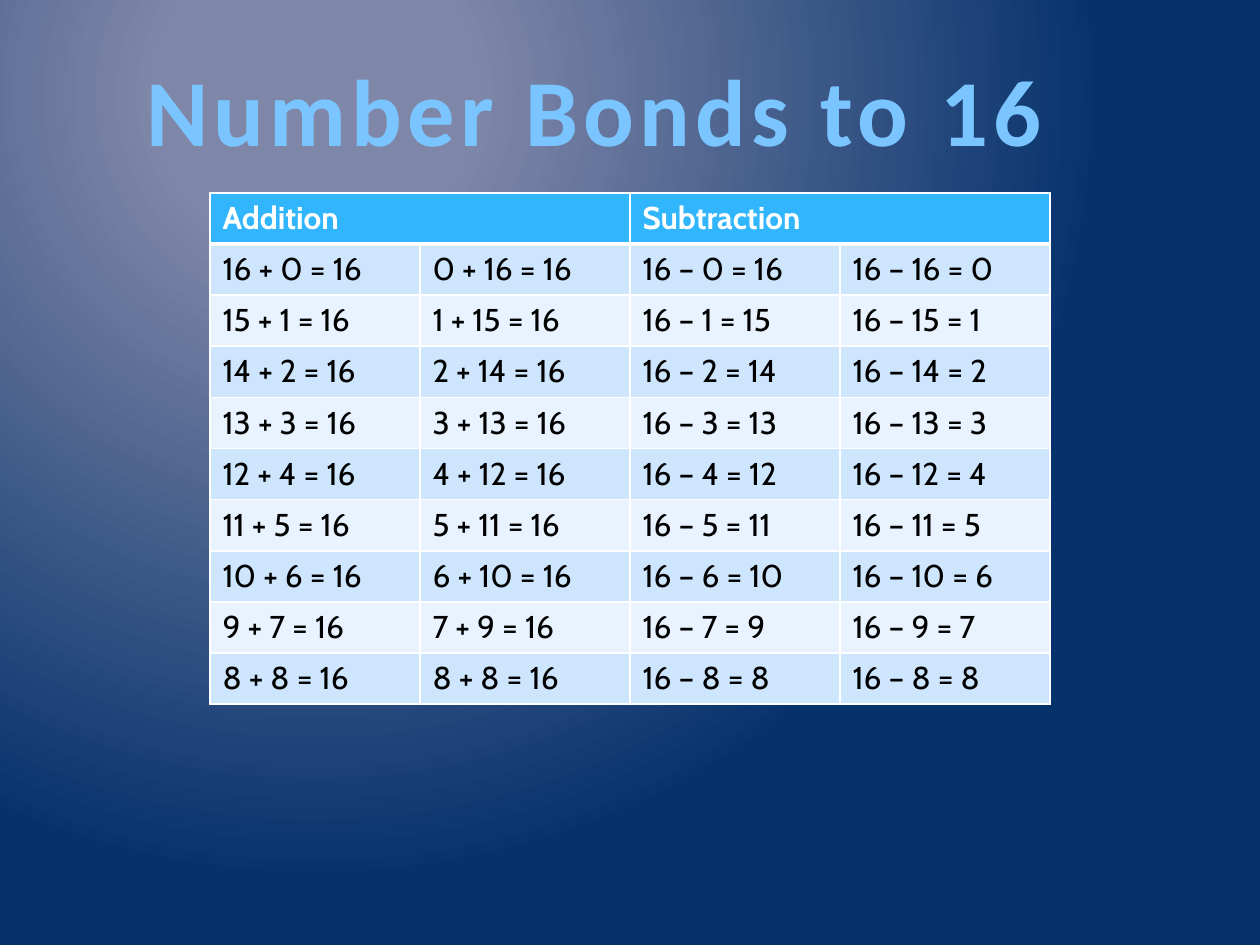
from lxml import etree
from pptx import Presentation
from pptx.dml.color import RGBColor
from pptx.enum.text import MSO_ANCHOR, PP_ALIGN
from pptx.oxml import parse_xml
from pptx.oxml.ns import nsdecls, qn
from pptx.util import Inches, Pt

CENTER = PP_ALIGN.CENTER
MIDDLE = MSO_ANCHOR.MIDDLE

HAZE = RGBColor(0x7F, 0x87, 0xA8)
NAVY = RGBColor(0x06, 0x32, 0x6C)
SKY = RGBColor(0x7A, 0xC5, 0xFF)
AZURE = RGBColor(0x00, 0x92, 0xDF)
OUTLINE = RGBColor(0x07, 0x3E, 0x87)
HEADER_BLUE = RGBColor(0x31, 0xB6, 0xFD)
BANDS = (RGBColor(0xCE, 0xE5, 0xFE), RGBColor(0xE8, 0xF3, 0xFF))
WHITE = RGBColor(0xFF, 0xFF, 0xFF)
BLACK = RGBColor(0x00, 0x00, 0x00)

WIDTH, HEIGHT = Inches(10), Inches(7.5)
TOTAL = 16
BOND_COUNT = TOTAL // 2 + 1
COLUMNS = 4


def gradient(stops, direction):
    """Return a gradient fill from (percent, colour) stops and direction XML."""
    marks = "".join(
        f'<a:gs pos="{percent * 1000}"><a:srgbClr val="{color}"/></a:gs>'
        for percent, color in stops
    )
    return parse_xml(
        f'<a:gradFill rotWithShape="1" {nsdecls("a")}>'
        f"<a:gsLst>{marks}</a:gsLst>{direction}</a:gradFill>"
    )


def paint_background(slide):
    """Fill the slide with a circular glow near its top left."""
    slide.background.fill.solid()
    solid = slide.element.find(".//" + qn("p:bgPr")).find(qn("a:solidFill"))
    glow = gradient(
        ((20, HAZE), (100, NAVY)),
        '<a:path path="circle">'
        '<a:fillToRect l="50000" t="20000" r="100000" b="100000"/></a:path>',
    )
    solid.getparent().replace(solid, glow)


def add_title(slide, text):
    """Add the spaced, outlined gradient heading."""
    box = slide.shapes.add_textbox(Inches(0.35), Inches(0.36), Inches(8.74), Inches(1.01))
    frame = box.text_frame
    frame.word_wrap = True
    frame.vertical_anchor = MIDDLE
    heading = frame.paragraphs[0]
    heading.alignment = CENTER
    run = heading.add_run()
    run.text = text
    run.font.name = "Calibri"
    run.font.size = Pt(54)
    run.font.bold = True
    properties = run.font._element
    properties.set("spc", "300")
    outline = parse_xml(
        f'<a:ln w="{Pt(0.9)}" {nsdecls("a")}><a:solidFill>'
        f'<a:srgbClr val="{OUTLINE}"/></a:solidFill></a:ln>'
    )
    fill = gradient(((10, SKY), (75, AZURE)), '<a:lin ang="5400000" scaled="0"/>')
    shadow = parse_xml(
        f'<a:effectLst {nsdecls("a")}><a:outerShdw blurRad="38100" dist="38100" '
        f'dir="2700000"><a:srgbClr val="{AZURE}"><a:alpha val="50000"/></a:srgbClr>'
        "</a:outerShdw></a:effectLst>"
    )
    for position, effect in enumerate((outline, fill, shadow)):
        properties.insert(position, effect)


def set_borders(cell, top, bottom):
    """Draw white cell edges, with top and bottom widths in points."""
    properties = cell._tc.get_or_add_tcPr()
    edges = (("lnL", 1), ("lnR", 1), ("lnT", top), ("lnB", bottom))
    for position, (edge, width) in enumerate(edges):
        line = etree.Element(qn(f"a:{edge}"), w=str(Pt(width)))
        fill = etree.SubElement(line, qn("a:solidFill"))
        etree.SubElement(fill, qn("a:srgbClr"), val=str(WHITE))
        properties.insert(position, line)


def fill_cell(cell, text, row):
    """Write one cell in the style of its row."""
    header = row == 0
    cell.fill.solid()
    cell.fill.fore_color.rgb = HEADER_BLUE if header else BANDS[(row - 1) % 2]
    set_borders(cell, 3 if row == 1 else 1, 3 if header else 1)
    cell.text = text
    font = cell.text_frame.paragraphs[0].font
    font.name = "Cabin"
    font.size = Pt(18)
    font.bold = header
    font.color.rgb = WHITE if header else BLACK


def bond_row(part):
    """Return the two sums and two differences for one number bond."""
    rest = TOTAL - part
    return (
        f"{rest} + {part} = {TOTAL}",
        f"{part} + {rest} = {TOTAL}",
        f"{TOTAL} – {part} = {rest}",
        f"{TOTAL} – {rest} = {part}",
    )


def add_bonds_table(slide):
    """Add the number bonds under two merged headings."""
    rows = [("Addition", "", "Subtraction", "")]
    rows += [bond_row(part) for part in range(BOND_COUNT)]
    table = slide.shapes.add_table(
        len(rows), COLUMNS, WIDTH // 6, Inches(1.53), WIDTH * 2 // 3, Inches(4.06)
    ).table
    for row, texts in enumerate(rows):
        for column, text in enumerate(texts):
            fill_cell(table.cell(row, column), text, row)
    for first in (0, 2):
        table.cell(0, first).merge(table.cell(0, first + 1))


def main():
    """Build and save the slide."""
    deck = Presentation()
    deck.slide_width, deck.slide_height = WIDTH, HEIGHT
    slide = deck.slides.add_slide(deck.slide_layouts[6])
    paint_background(slide)
    add_title(slide, f"Number Bonds to {TOTAL}")
    add_bonds_table(slide)
    deck.save("out.pptx")


if __name__ == "__main__":
    main()
